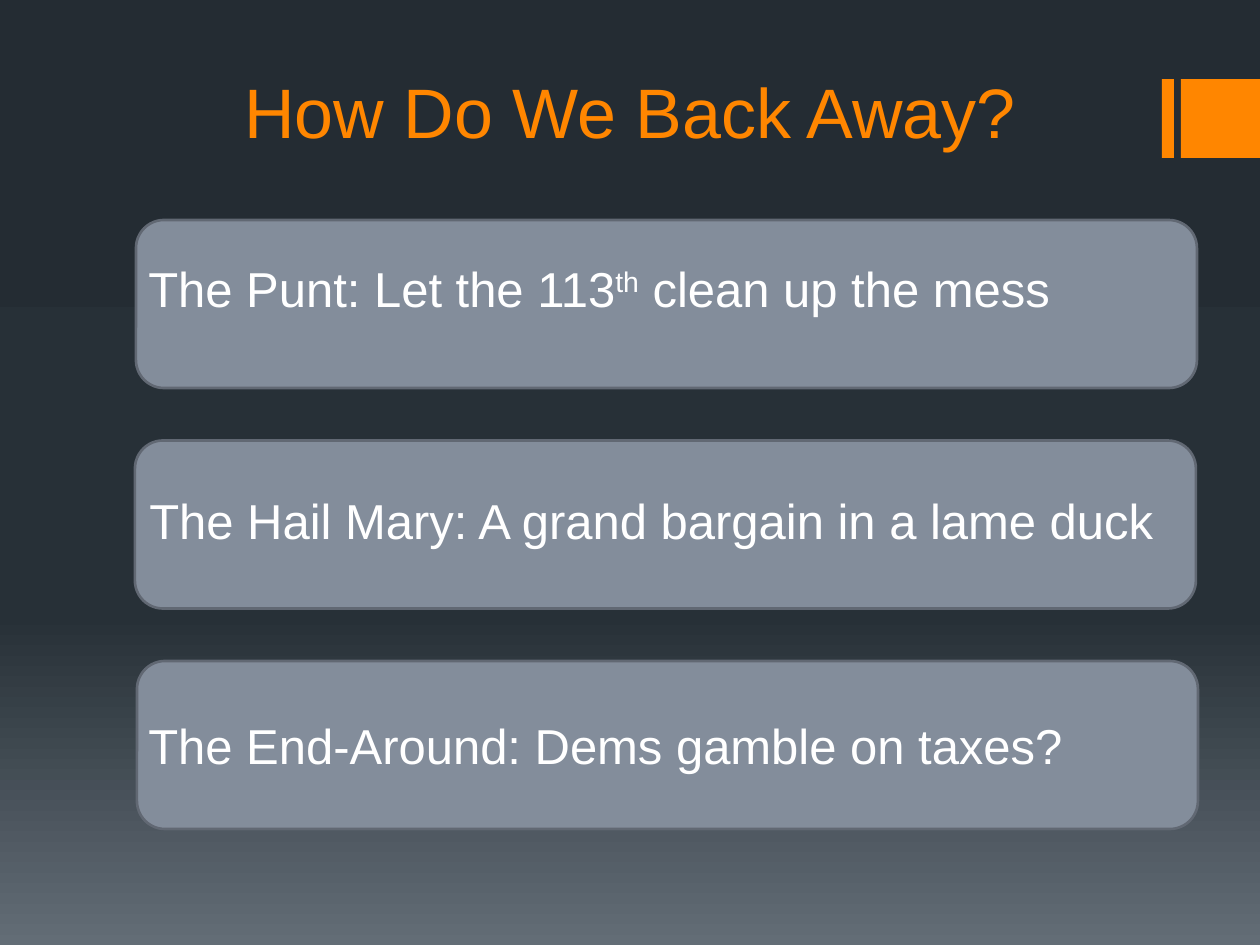
from copy import deepcopy

from pptx import Presentation
from pptx.dml.color import RGBColor
from pptx.enum.shapes import MSO_SHAPE as Shape
from pptx.enum.text import MSO_ANCHOR as Anchor, PP_ALIGN as Align
from pptx.util import Emu, Pt

PX = 914400 / 126
COLORS = {
    "accent": "FF8600",
    "card": "838D9B",
    "card_line": "616873",
    "text": "FFFFFF",
}
BACKGROUND_STOPS = [(0, "242C33"), (0.65, "273037"), (1, "636D76")]
CARD_WIDTH, CARD_HEIGHT, CARD_TOP, CARD_PITCH = 1061, 168, 220, 220.5
TEXT_WIDTH, TEXT_HEIGHT = 1124, 72

# Card left, text offset inside the card, and (text, superscript percent) runs
OPTIONS = [
    (136, (0, 32), [("The Punt: Let the 113", 0), ("th", 30), (" clean up the mess", 0)]),
    (135, (2, 44), [("The Hail Mary: A grand bargain in a lame duck", 0)]),
    (137, (-1, 48), [("The End-Around: Dems gamble on taxes?", 0)]),
]


def px(*lengths):
    return [Emu(round(length * PX)) for length in lengths]


def rgb(name):
    return RGBColor.from_string(COLORS[name])


def paint_background(slide):
    fill = slide.background.fill
    fill.gradient()
    fill.gradient_angle = 270
    stop_list = fill._fill._gradFill.gsLst
    stop_list.insert(1, deepcopy(stop_list[0]))
    for stop, (position, color) in zip(fill.gradient_stops, BACKGROUND_STOPS):
        stop.position = position
        stop.color.rgb = RGBColor.from_string(color)


def add_block(slide, kind, box, fill, line=None):
    shape = slide.shapes.add_shape(kind, *px(*box))
    shape.shadow.inherit = False
    shape.fill.solid()
    shape.fill.fore_color.rgb = rgb(fill)
    if line:
        shape.line.color.rgb = rgb(line)
        shape.line.width = Pt(1.5)
    else:
        shape.line.fill.background()


def add_text(slide, box, runs, size, color, anchor=Anchor.TOP, align=Align.LEFT):
    frame = slide.shapes.add_textbox(*px(*box)).text_frame
    for name, value in {"word_wrap": True, "vertical_anchor": anchor}.items():
        setattr(frame, name, value)
    paragraph = frame.paragraphs[0]
    paragraph.alignment = align
    for text, superscript in runs:
        run = paragraph.add_run()
        run.text = text
        for name, value in {"name": "Arial", "size": Pt(size)}.items():
            setattr(run.font, name, value)
        run.font.color.rgb = rgb(color)
        if superscript:
            run._r.get_or_add_rPr().set("baseline", str(superscript * 1000))


def add_accent_tab(slide, left, top, size):
    """Thin bar followed by a square that reaches the slide edge."""
    add_block(slide, Shape.RECTANGLE, (left, top, 12, size), "accent")
    add_block(slide, Shape.RECTANGLE, (left + 19, top, size, size), "accent")


def add_title(slide, box):
    add_text(slide, box, [("How Do We Back Away?", 0)], 40, "accent",
             Anchor.BOTTOM, Align.CENTER)


def add_option(slide, left, top, text_offset, runs):
    add_block(slide, Shape.ROUNDED_RECTANGLE,
              (left, top, CARD_WIDTH, CARD_HEIGHT), "card", "card_line")
    across, down = text_offset
    add_text(slide, (left + across, top + down, TEXT_WIDTH, TEXT_HEIGHT),
             runs, 28, "text")


def main():
    presentation = Presentation()
    presentation.slide_width, presentation.slide_height = px(1260, 945)
    slide = presentation.slides.add_slide(presentation.slide_layouts[6])
    paint_background(slide)
    add_accent_tab(slide, 1162, 79, 79)
    add_title(slide, (126, 0, 1008, 159))
    for row, (left, text_offset, runs) in enumerate(OPTIONS):
        add_option(slide, left, CARD_TOP + row * CARD_PITCH, text_offset, runs)
    presentation.save("out.pptx")


if __name__ == "__main__":
    main()
